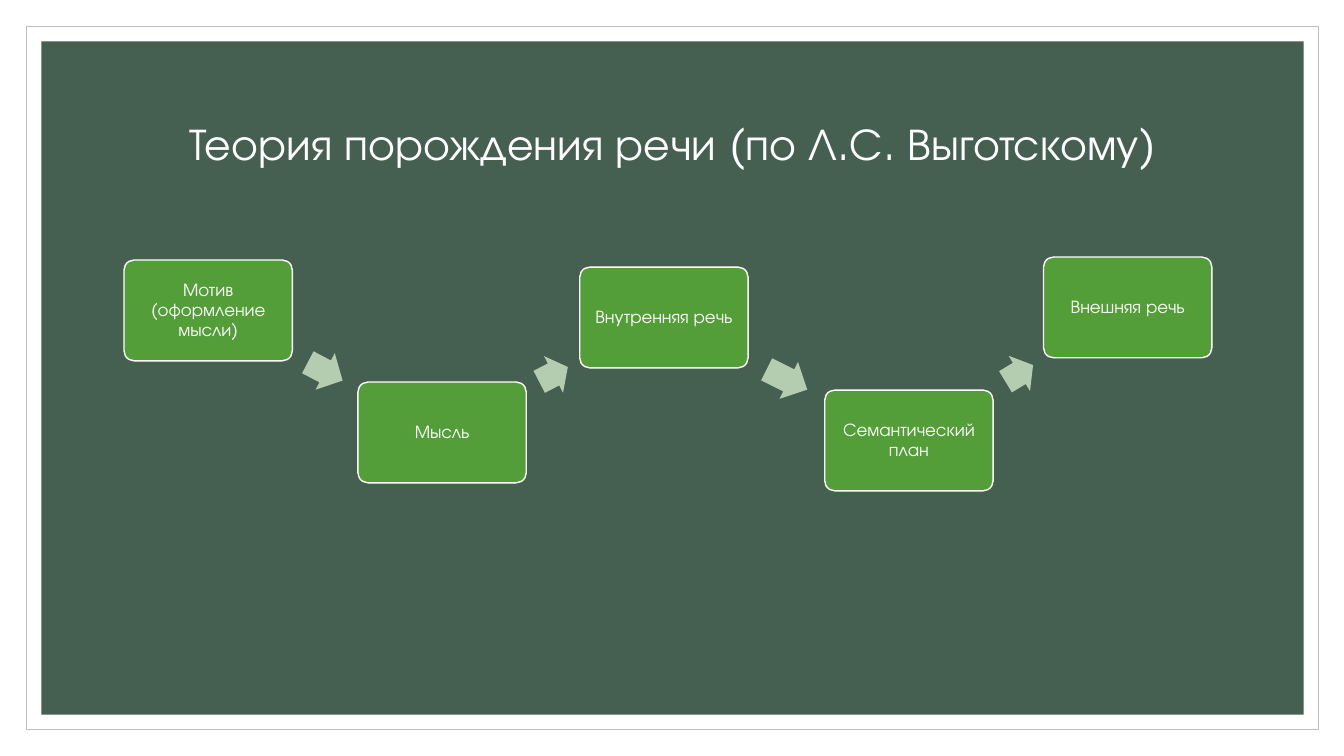
from pptx import Presentation
from pptx.dml.color import RGBColor
from pptx.enum.shapes import MSO_SHAPE
from pptx.enum.text import MSO_ANCHOR, PP_ALIGN
from pptx.util import Inches, Pt

FONT = "TeX Gyre Adventor"
WHITE = "FFFFFF"
STEPS = [
    ("Мотив (оформление мысли)", 1.23, 2.58),
    ("Мысль", 3.55, 3.79),
    ("Внутренняя речь", 5.75, 2.65),
    ("Семантический план", 8.18, 3.87),
    ("Внешняя речь", 10.35, 2.55),
]
ARROWS = [
    (3.03, 3.48, 0.39, 27.7),
    (5.33, 3.51, 0.32, 332.6),
    (7.58, 3.56, 0.45, 26.5),
    (9.95, 3.5, 0.32, 328.8),
]


def color(code):
    return RGBColor.from_string(code)


class Deck:
    def __init__(self, slide):
        self.slide = slide

    def shape(self, kind, box, fill, line=None, width=1):
        item = self.slide.shapes.add_shape(kind, *map(Inches, box))
        item.shadow.inherit = False
        item.fill.solid()
        item.fill.fore_color.rgb = color(fill)
        if line:
            item.line.color.rgb = color(line)
            item.line.width = Pt(width)
        else:
            item.line.fill.background()
        return item

    def label(self, item, text, size):
        frame = item.text_frame
        frame.text = text
        frame.word_wrap = True
        frame.vertical_anchor = MSO_ANCHOR.MIDDLE
        frame.margin_left = frame.margin_right = Inches(0.05)
        frame.margin_top = frame.margin_bottom = Inches(0.05)
        para = frame.paragraphs[0]
        para.alignment = PP_ALIGN.CENTER
        para.line_spacing = 0.9
        para.font.name = FONT
        para.font.size = Pt(size)
        para.font.color.rgb = color(WHITE)

    def title(self, text, box):
        item = self.slide.shapes.title
        item.left, item.top, item.width, item.height = map(Inches, box)
        self.label(item, text, 32)
        self.slide.shapes.element.append(item.element)

    def step(self, text, left, top):
        item = self.shape(
            MSO_SHAPE.ROUNDED_RECTANGLE, (left, top, 1.67, 1), "549E39", WHITE
        )
        item.adjustments[0] = 0.1
        self.label(item, text, 13)

    def arrow(self, left, top, width, angle):
        item = self.shape(
            MSO_SHAPE.RIGHT_ARROW, (left, top, width, 0.41), "B4CCAF"
        )
        item.adjustments[0] = 0.6
        item.adjustments[1] = 0.5
        item.rotation = angle


def main():
    show = Presentation()
    show.slide_width = Inches(13.33)
    show.slide_height = Inches(7.5)
    deck = Deck(show.slides.add_slide(show.slide_layouts[5]))
    deck.shape(
        MSO_SHAPE.RECTANGLE, (0.26, 0.26, 12.82, 6.98), WHITE, "BFBFBF", 0.5
    )
    deck.shape(MSO_SHAPE.RECTANGLE, (0.41, 0.41, 12.52, 6.68), "455F51")
    deck.title("Теория порождения речи (по Л.С. Выготскому)", (1.17, 0.7, 11, 1.5))
    for step in STEPS:
        deck.step(*step)
    for arrow in ARROWS:
        deck.arrow(*arrow)
    show.save("out.pptx")


if __name__ == "__main__":
    main()
